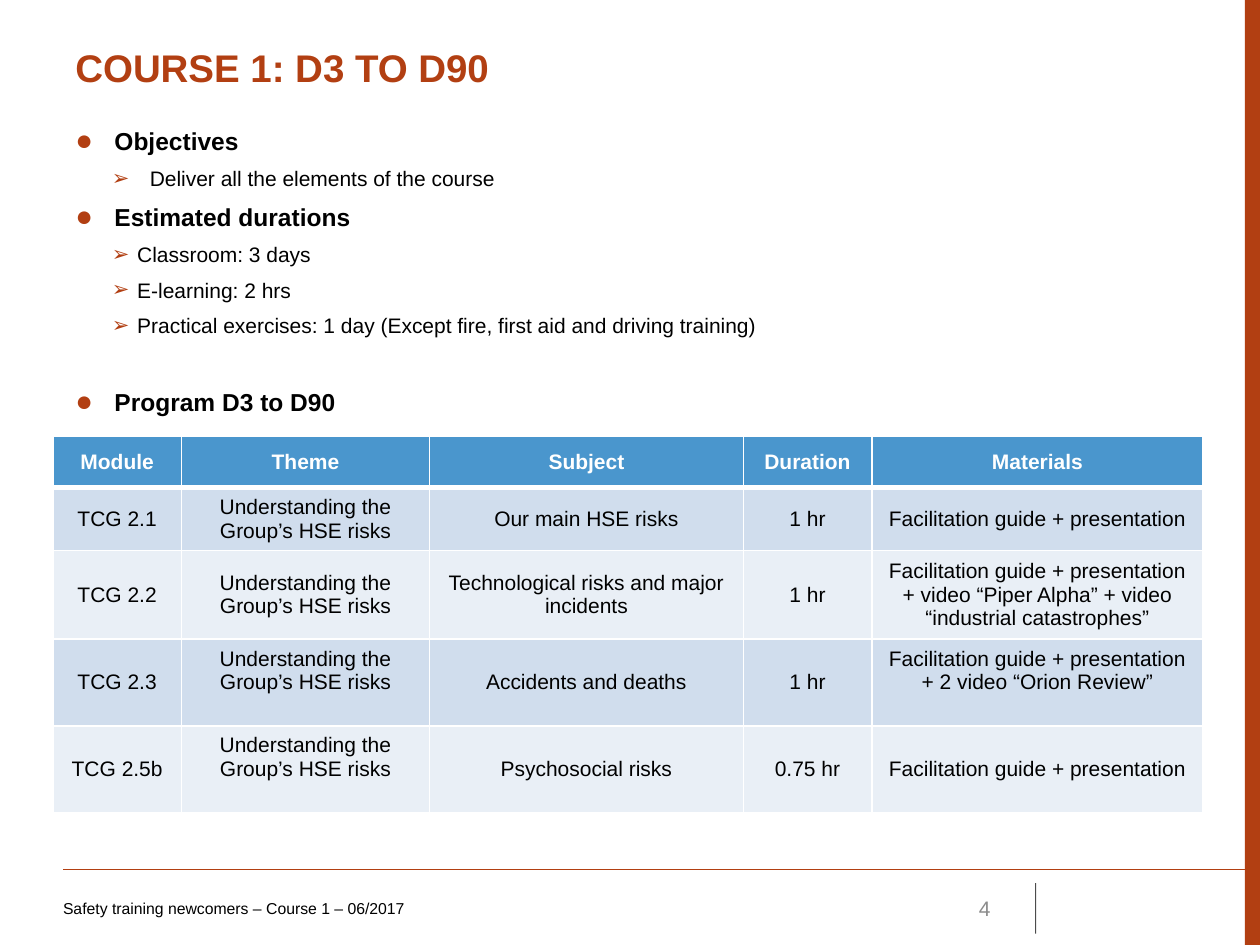
from lxml import etree
from pptx import Presentation
from pptx.dml.color import RGBColor
from pptx.enum.shapes import MSO_CONNECTOR, MSO_SHAPE
from pptx.enum.text import MSO_ANCHOR as ANCHOR, PP_ALIGN as ALIGN
from pptx.oxml.ns import qn
from pptx.util import Inches, Pt

FONT = "Arial"
COLORS = {
    "accent": "B23F12", "text": "000000", "page": "8C8C8C", "white": "FFFFFF",
    "header": "4A96CD", "odd": "D0DDED", "even": "E9EFF6",
}
# text, level, hanging indent in inches, space before in points
OUTLINE = [
    ("Objectives", 0, 0.31, 0),
    ("Deliver all the elements of the course", 1, 0.3, 3),
    ("Estimated durations", 0, 0.31, 3),
    ("Classroom: 3 days", 1, 0.2, 3),
    ("E-learning: 2 hrs", 1, 0.2, 3),
    ("Practical exercises: 1 day (Except fire, first aid and driving training)", 1, 0.2, 3),
    ("Program D3 to D90", 0, 0.31, 25),
]
THEME = "Understanding the Group’s HSE risks"
GUIDE = "Facilitation guide + presentation"
PROGRAM = [
    ("Module", "Theme", "Subject", "Duration", "Materials"),
    ("TCG 2.1", THEME, "Our main HSE risks", "1 hr", GUIDE),
    ("TCG 2.2", THEME, "Technological risks and major incidents", "1 hr",
     GUIDE + " + video “Piper Alpha” + video “industrial catastrophes”"),
    ("TCG 2.3", THEME, "Accidents and deaths", "1 hr", GUIDE + " + 2 video “Orion Review”"),
    ("TCG 2.5b", THEME, "Psychosocial risks", "0.75 hr", GUIDE),
]
COLUMN_WIDTHS = [1.02, 1.97, 2.49, 1.02, 2.63]
ROW_HEIGHTS = [0.41, 0.47, 0.66, 0.66, 0.66]
RAISED_CELLS = {(3, 1), (3, 4), (4, 1)}  # text sits one line above the bottom


def rgb(name):
    return RGBColor.from_string(COLORS[name])


def style(paragraph, size, color="text", bold=False, align=None):
    font = paragraph.font
    font.name, font.size, font.bold = FONT, Pt(size), bold
    font.color.rgb = rgb(color)
    paragraph.alignment = align


def add_text_frame(slide, left, top, width, height, anchor=ANCHOR.TOP):
    box = slide.shapes.add_textbox(Inches(left), Inches(top), Inches(width), Inches(height))
    frame = box.text_frame
    frame.word_wrap = True
    frame.vertical_anchor = anchor
    return frame


def add_line(slide, start, end, color, width, opacity=100):
    line = slide.shapes.add_connector(
        MSO_CONNECTOR.STRAIGHT, *(Inches(value) for value in (*start, *end)))
    line.line.color.rgb = rgb(color)
    line.line.width = Pt(width)
    if opacity < 100:
        tint = next(line.element.spPr.iter(qn("a:srgbClr")))
        etree.SubElement(tint, qn("a:alpha"), val=str(opacity * 1000))
    etree.SubElement(line.element.spPr, qn("a:effectLst"))


def add_side_band(slide):
    band = slide.shapes.add_shape(
        MSO_SHAPE.RECTANGLE, Inches(9.88), 0, Inches(0.12), Inches(7.5))
    band.shadow.inherit = False
    band.fill.solid()
    band.fill.fore_color.rgb = rgb("accent")
    band.line.fill.background()


def add_bullet(paragraph, level, hanging):
    left = hanging if level == 0 else 0.29 + hanging
    properties = paragraph._p.get_or_add_pPr()
    properties.set("marL", str(Inches(left)))
    properties.set("indent", str(-Inches(hanging)))
    color = etree.SubElement(properties, qn("a:buClr"))
    etree.SubElement(color, qn("a:srgbClr"), val=COLORS["accent"])
    if level == 0:
        etree.SubElement(properties, qn("a:buSzPct"), val="120000")
    etree.SubElement(properties, qn("a:buFont"), typeface=FONT)
    etree.SubElement(properties, qn("a:buChar"), char="➢" if level else "●")


def add_outline(slide):
    frame = add_text_frame(slide, 0.5, 0.95, 8.99, 2.4)
    for index, (text, level, hanging, before) in enumerate(OUTLINE):
        paragraph = frame.add_paragraph() if index else frame.paragraphs[0]
        paragraph.text = text
        paragraph.level = level
        add_bullet(paragraph, level, hanging)
        paragraph.space_before, paragraph.space_after = Pt(before), Pt(3)
        style(paragraph, 12 if level else 14, bold=level == 0)


def add_borders(cell, bottom_width):
    properties = cell._tc.get_or_add_tcPr()
    for side, width in (("L", 1), ("R", 1), ("T", 1), ("B", bottom_width)):
        border = etree.SubElement(properties, qn(f"a:ln{side}"), w=str(Pt(width)))
        fill = etree.SubElement(border, qn("a:solidFill"))
        etree.SubElement(fill, qn("a:srgbClr"), val=COLORS["white"])


def add_program(slide):
    table = slide.shapes.add_table(
        len(PROGRAM), len(COLUMN_WIDTHS), Inches(0.42), Inches(3.46),
        Inches(sum(COLUMN_WIDTHS)), Inches(sum(ROW_HEIGHTS))).table
    for column, width in zip(table.columns, COLUMN_WIDTHS):
        column.width = Inches(width)
    for row, height in zip(table.rows, ROW_HEIGHTS):
        row.height = Inches(height)
    for r, entries in enumerate(PROGRAM):
        is_header = r == 0
        background = "header" if is_header else "odd" if r % 2 else "even"
        for c, text in enumerate(entries):
            cell = table.cell(r, c)
            cell.text = text
            cell.vertical_anchor = ANCHOR.MIDDLE
            if (r, c) in RAISED_CELLS:
                cell.margin_bottom = Inches(0.24)
            add_borders(cell, 3 if is_header or r == 0 else 1)
            cell.fill.solid()
            cell.fill.fore_color.rgb = rgb(background)
            style(cell.text_frame.paragraphs[0], 12,
                  "white" if is_header else "text", is_header, ALIGN.CENTER)


def add_title(slide):
    title = add_text_frame(slide, 0.5, 0.3, 8.99, 0.69).paragraphs[0]
    title.text = "COURSE 1: D3 TO D90"
    style(title, 22, "accent", bold=True)


def add_footer(slide):
    add_line(slide, (0.5, 6.9), (10, 6.9), "accent", 0.75)
    add_line(slide, (8.22, 7.01), (8.22, 7.41), "text", 0.5, opacity=70)
    frame = add_text_frame(slide, 0.5, 7.01, 6.08, 0.4, ANCHOR.MIDDLE)
    frame.margin_left = 0
    course = frame.paragraphs[0]
    course.text = "Safety training newcomers – Course 1 – 06/2017"
    style(course, 9)
    page = add_text_frame(slide, 7.17, 7.01, 0.79, 0.4, ANCHOR.MIDDLE).paragraphs[0]
    page.text = "4"
    style(page, 12, "page", align=ALIGN.RIGHT)


def main():
    deck = Presentation()
    deck.slide_width, deck.slide_height = Inches(10), Inches(7.5)
    slide = deck.slides.add_slide(deck.slide_layouts[6])
    add_side_band(slide)
    add_footer(slide)
    add_title(slide)
    add_outline(slide)
    add_program(slide)
    deck.save("out.pptx")


if __name__ == "__main__":
    main()
